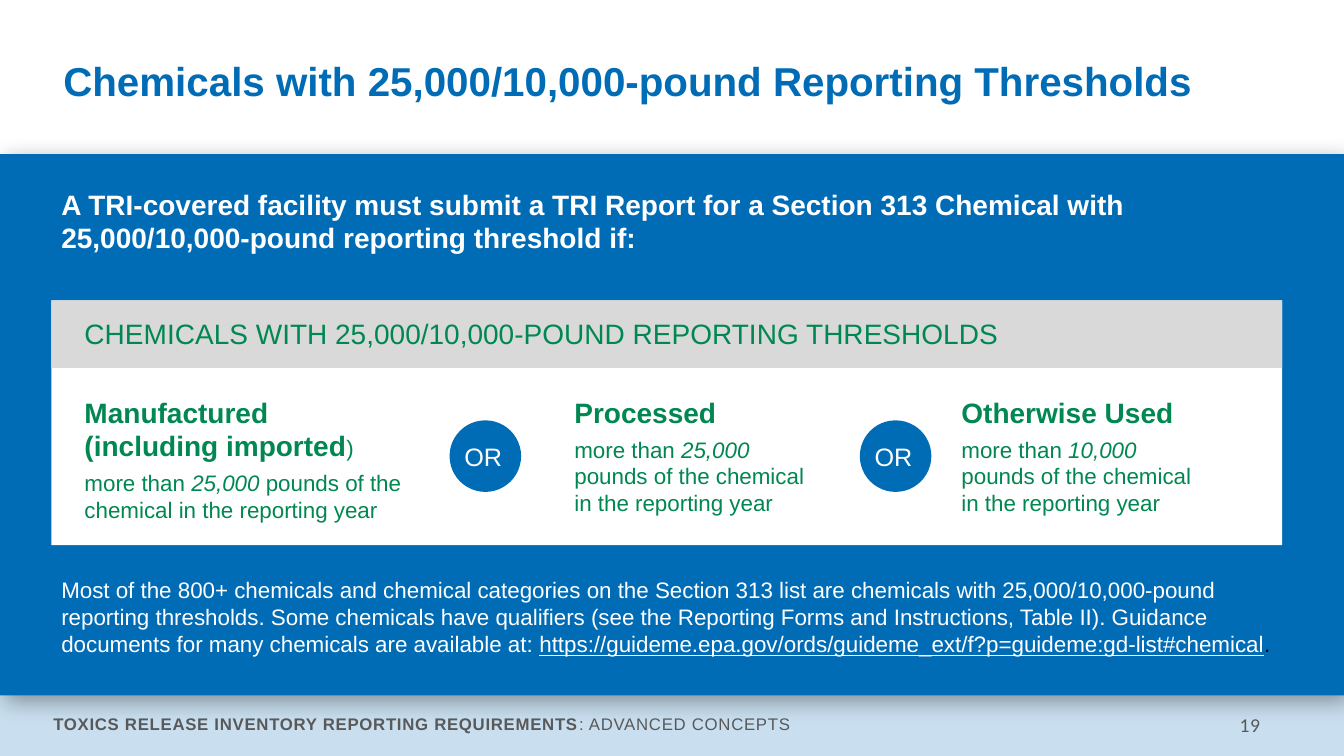
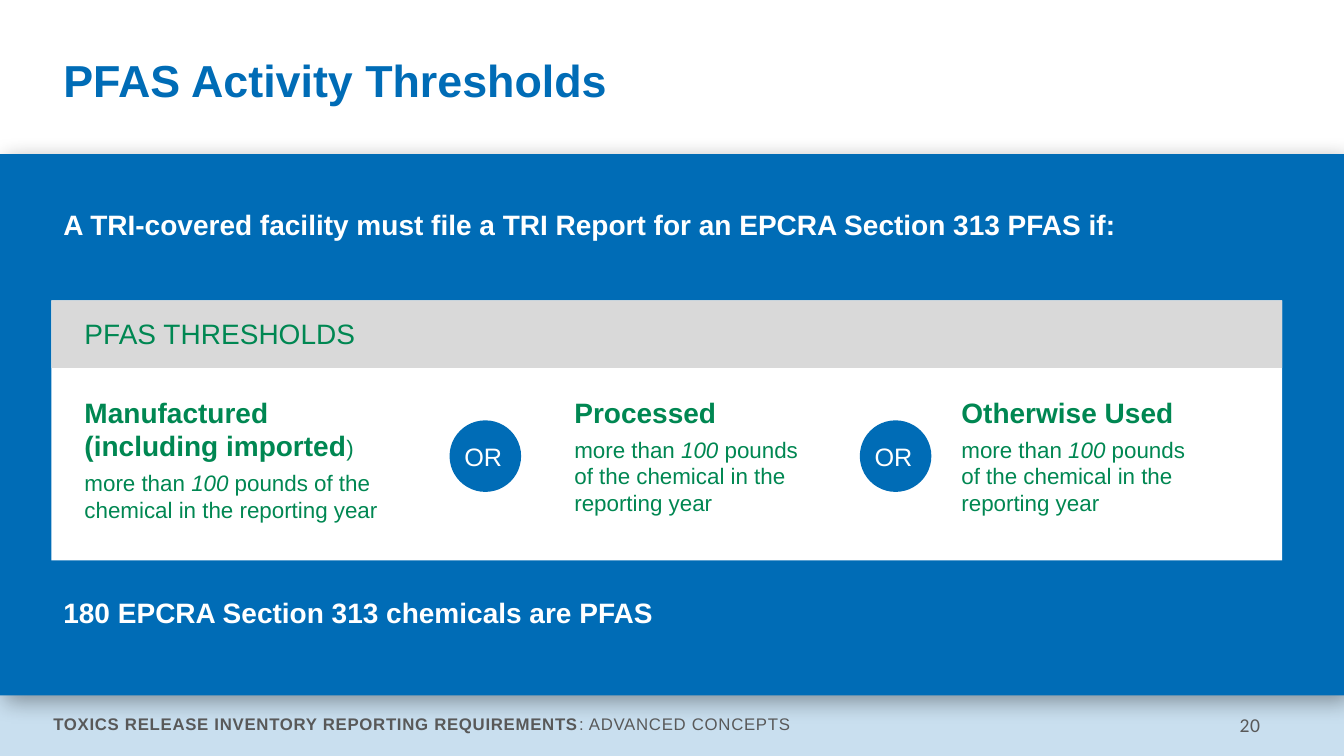
from dataclasses import dataclass

from lxml import etree
from pptx import Presentation
from pptx.dml.color import RGBColor
from pptx.enum import shapes, text
from pptx.oxml import ns
from pptx.util import Pt

BLUE = RGBColor(0x00, 0x6C, 0xB6)
GREEN = RGBColor(0x00, 0x87, 0x52)
HEADER_GRAY = RGBColor(0xD9, 0xD9, 0xD9)
FOOTER_GRAY = RGBColor(0x59, 0x59, 0x59)
WHITE = RGBColor(0xFF, 0xFF, 0xFF)
BLACK = RGBColor(0x00, 0x00, 0x00)

PAGE_WIDTH, PAGE_HEIGHT = 960, 540
CARD_LEFT, CARD_TOP, CARD_WIDTH = 36.72, 214.56, 879.12
CARD_HEADER_HEIGHT = 48.24
CARD_TEXT_LEFT = 53.28
COLUMN_TOP, COLUMN_HEIGHT = 278.64, 95.76
OR_TOP, OR_SIZE = 300.24, 51.12
OR_LEFTS = (321.12, 614.16)


@dataclass(frozen=True)
class Style:
    size: float
    color: RGBColor
    bold: bool = False
    italic: bool = False
    underline: bool = False
    font: str = "Arial"
    tracking: float = 0


@dataclass(frozen=True)
class Span:
    words: str
    style: Style


@dataclass(frozen=True)
class Box:
    left: float
    top: float
    width: float
    height: float

    def lengths(self) -> tuple:
        return Pt(self.left), Pt(self.top), Pt(self.width), Pt(self.height)


@dataclass(frozen=True)
class Activity:
    heading: tuple
    left: float
    width: float


@dataclass(frozen=True)
class ThresholdSlide:
    number: int
    title: str
    title_size: float
    condition: str
    condition_box: Box
    card_heading: str
    card_height: float
    pounds: tuple
    closing: tuple
    closing_box: Box


LEAD = Style(20, WHITE, bold=True)
NOTE = Style(16, WHITE)
CARD_HEADING = Style(20, GREEN)
ACTIVITY_HEADING = Style(20, GREEN, bold=True)
DETAIL = Style(16, GREEN)
AMOUNT = Style(16, GREEN, italic=True)
FOOTER = Style(12, FOOTER_GRAY, tracking=0.5)
FOOTER_BOLD = Style(12, FOOTER_GRAY, bold=True, tracking=0.5)
PAGE_NUMBER = Style(14, FOOTER_GRAY, font="Calibri", tracking=0.5)

ACTIVITIES = (
    Activity((Span("Manufactured (including imported", ACTIVITY_HEADING), Span(")", DETAIL)),
             CARD_TEXT_LEFT, 242.64),
    Activity((Span("Processed", ACTIVITY_HEADING),), 403.2, 190.08),
    Activity((Span("Otherwise Used", ACTIVITY_HEADING),), 679.68, 190.08),
)

SLIDES = (
    ThresholdSlide(
        19, "Chemicals with 25,000/10,000-pound Reporting Thresholds", 28.8,
        "A TRI-covered facility must submit a TRI Report for a Section 313 Chemical with "
        "25,000/10,000-pound reporting threshold if:",
        Box(CARD_LEFT, 130.32, CARD_WIDTH, 59.76),
        "CHEMICALS WITH 25,000/10,000-POUND REPORTING THRESHOLDS", 174.96,
        ("25,000", "25,000", "10,000"),
        (
            Span("Most of the 800+ chemicals and chemical categories on the Section 313 list are "
                 "chemicals with 25,000/10,000-pound reporting thresholds. Some chemicals have "
                 "qualifiers (see the Reporting Forms and Instructions, Table II). Guidance "
                 "documents for many chemicals are available at: ", NOTE),
            Span("https://guideme.epa.gov/ords/guideme_ext/f?p=guideme:gd-list#chemical",
                 Style(16, WHITE, underline=True)),
            Span(".", Style(16, BLACK)),
        ),
        Box(CARD_LEFT, 408.24, 897.84, 65.52),
    ),
    ThresholdSlide(
        20, "PFAS Activity Thresholds", 32,
        "A TRI-covered facility must file a TRI Report for an EPCRA Section 313 PFAS if:",
        Box(38.16, 144.72, 869.04, 67.68),
        "PFAS THRESHOLDS", 185.76,
        ("100", "100", "100"),
        (Span("180 EPCRA Section 313 chemicals are PFAS", LEAD),),
        Box(38.16, 421.92, 718.56, 31.68),
    ),
)


def add_spans(paragraph, spans: tuple) -> None:
    for span in spans:
        run = paragraph.add_run()
        run.text = span.words
        style = span.style
        font = run.font
        font.name, font.size = style.font, Pt(style.size)
        font.bold, font.italic, font.underline = style.bold, style.italic, style.underline
        font.color.rgb = style.color
        if style.tracking:
            run._r.get_or_add_rPr().set("spc", str(round(style.tracking * 100)))


def add_text(slide, box: Box, *paragraphs: tuple):
    frame = slide.shapes.add_textbox(*box.lengths()).text_frame
    frame.word_wrap = True
    for index, spans in enumerate(paragraphs):
        paragraph = frame.add_paragraph() if index else frame.paragraphs[0]
        if index:
            paragraph.space_before = Pt(5)
        add_spans(paragraph, spans)
    return frame


def add_filled(slide, box: Box, color: RGBColor, preset=shapes.MSO_SHAPE.RECTANGLE):
    shape = slide.shapes.add_shape(preset, *box.lengths())
    shape.shadow.inherit = False
    shape.fill.solid()
    shape.fill.fore_color.rgb = color
    shape.line.fill.background()
    return shape


def add_alpha(color_element, percent: int) -> None:
    etree.SubElement(color_element, ns.qn("a:alpha")).set("val", str(percent * 1000))


def add_soft_shadow(shape) -> None:
    effects = shape._element.spPr.find(ns.qn("a:effectLst"))
    shadow = etree.SubElement(effects, ns.qn("a:outerShdw"), blurRad=str(Pt(16)),
                              dist=str(Pt(6)), dir="2700000", algn="tl", rotWithShape="0")
    color = etree.SubElement(shadow, ns.qn("a:srgbClr"), val=str(BLACK))
    add_alpha(color, 34)


def add_frame(slide, number: int) -> None:
    footer_band = add_filled(slide, Box(0, 483.84, PAGE_WIDTH, PAGE_HEIGHT - 483.84), BLUE)
    add_alpha(footer_band._element.spPr.find(".//" + ns.qn("a:srgbClr")), 21)
    add_soft_shadow(add_filled(slide, Box(0, 110.16, PAGE_WIDTH, 386.64), BLUE))
    add_text(slide, Box(30.96, 506.16, 606.24, 21.6),
             (Span("TOXICS RELEASE INVENTORY REPORTING REQUIREMENTS", FOOTER_BOLD),
              Span(": ADVANCED CONCEPTS", FOOTER)))
    page_number = add_text(slide, Box(811.44, 505.44, 95.76, 24.48),
                           (Span(str(number), PAGE_NUMBER),))
    page_number.paragraphs[0].alignment = text.PP_ALIGN.RIGHT


def add_title(slide, words: str, size: float) -> None:
    title = add_text(slide, Box(38.16, 30.24, 869.04, 58.32),
                     (Span(words, Style(size, BLUE, bold=True)),))
    title.vertical_anchor = text.MSO_ANCHOR.MIDDLE
    title.paragraphs[0].line_spacing = 0.9


def add_or(slide, left: float) -> None:
    circle = add_filled(slide, Box(left, OR_TOP, OR_SIZE, OR_SIZE), BLUE,
                        shapes.MSO_SHAPE.OVAL)
    frame = circle.text_frame
    frame.word_wrap = False
    frame.vertical_anchor = text.MSO_ANCHOR.MIDDLE
    frame.margin_left = frame.margin_top = frame.margin_bottom = 0
    frame.margin_right = Pt(3)
    frame.paragraphs[0].alignment = text.PP_ALIGN.CENTER
    add_spans(frame.paragraphs[0], (Span("OR", Style(18, WHITE)),))


def add_threshold_card(slide, content: ThresholdSlide) -> None:
    add_filled(slide, Box(CARD_LEFT, CARD_TOP, CARD_WIDTH, content.card_height), WHITE)
    add_filled(slide, Box(CARD_LEFT, CARD_TOP, CARD_WIDTH, CARD_HEADER_HEIGHT), HEADER_GRAY)
    add_text(slide, Box(CARD_TEXT_LEFT, 222.48, 703.44, 33.12),
             (Span(content.card_heading, CARD_HEADING),))
    for activity, pounds in zip(ACTIVITIES, content.pounds):
        add_text(slide, Box(activity.left, COLUMN_TOP, activity.width, COLUMN_HEIGHT),
                 activity.heading,
                 (Span("more than ", DETAIL), Span(pounds, AMOUNT),
                  Span(" pounds of the chemical in the reporting year", DETAIL)))
    for left in OR_LEFTS:
        add_or(slide, left)


def main() -> None:
    deck = Presentation()
    deck.slide_width, deck.slide_height = Pt(PAGE_WIDTH), Pt(PAGE_HEIGHT)
    for content in SLIDES:
        slide = deck.slides.add_slide(deck.slide_layouts[6])
        add_frame(slide, content.number)
        add_title(slide, content.title, content.title_size)
        add_text(slide, content.condition_box, (Span(content.condition, LEAD),))
        add_threshold_card(slide, content)
        add_text(slide, content.closing_box, content.closing)
    deck.save("out.pptx")


if __name__ == "__main__":
    main()
